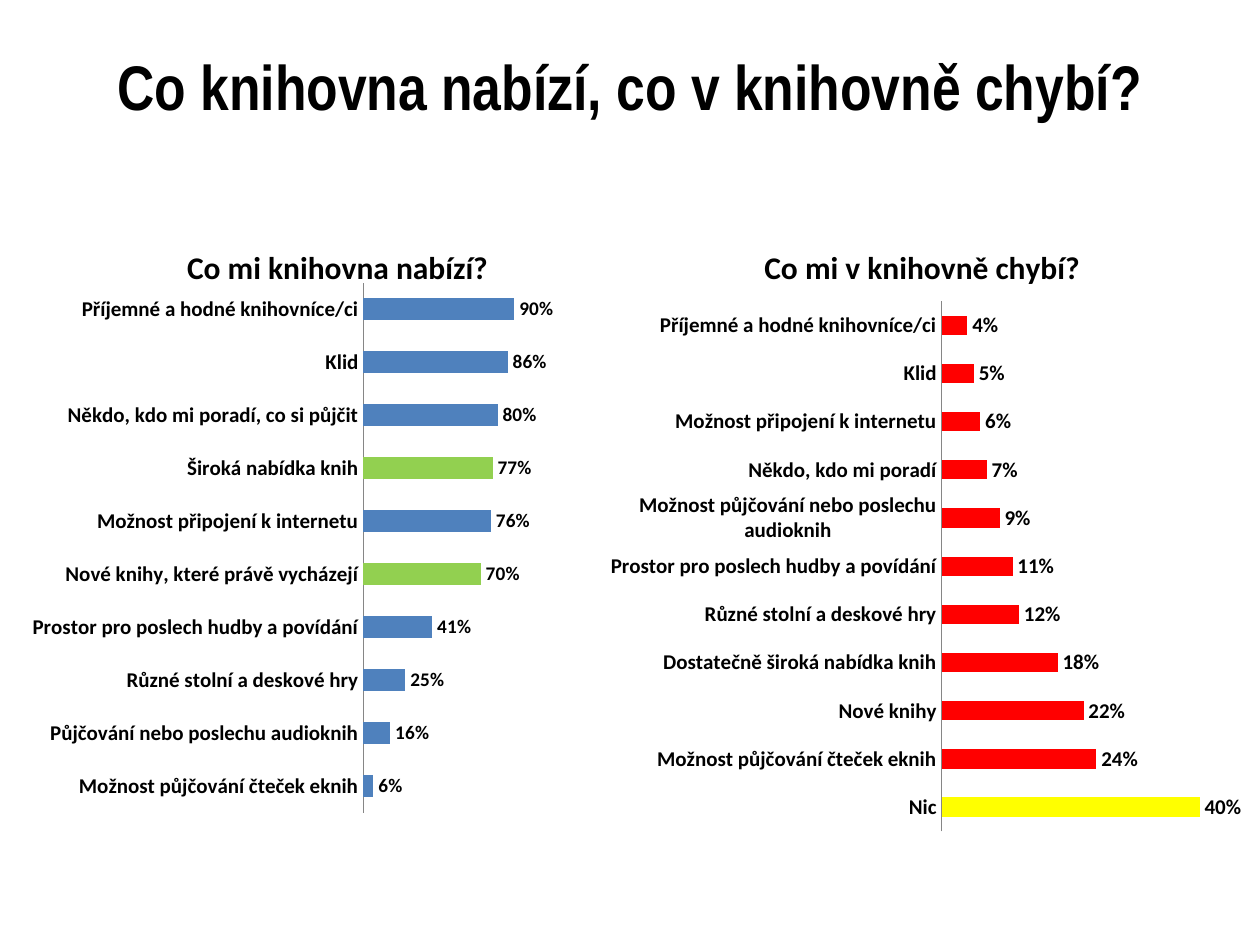
from lxml.etree import SubElement
from pptx import Presentation
from pptx.chart.data import CategoryChartData
from pptx.dml.color import RGBColor
from pptx.enum.chart import XL_CHART_TYPE, XL_LABEL_POSITION, XL_TICK_MARK
from pptx.enum.text import MSO_ANCHOR, PP_ALIGN
from pptx.oxml.ns import qn
from pptx.util import Inches, Pt

BLACK = RGBColor(0x00, 0x00, 0x00)
GRAY = RGBColor(0x86, 0x86, 0x86)
BLUE = RGBColor(0x4F, 0x81, 0xBD)
GREEN = RGBColor(0x92, 0xD0, 0x50)
RED = RGBColor(0xFF, 0x00, 0x00)
YELLOW = RGBColor(0xFF, 0xFF, 0x00)

PERCENT = "###0%"

OFFERED = {
    "Možnost půjčování čteček eknih": 0.06,
    "Půjčování nebo poslechu audioknih": 0.16,
    "Různé stolní a deskové hry": 0.25,
    "Prostor pro poslech hudby a povídání": 0.41,
    "Nové knihy, které právě vycházejí": 0.70,
    "Možnost připojení k internetu": 0.76,
    "Široká nabídka knih": 0.77,
    "Někdo, kdo mi poradí, co si půjčit": 0.80,
    "Klid": 0.86,
    "Příjemné a hodné knihovníce/ci": 0.90,
}
MISSING = {
    "Nic": 0.40,
    "Možnost půjčování čteček eknih": 0.24,
    "Nové knihy": 0.22,
    "Dostatečně široká nabídka knih": 0.18,
    "Různé stolní a deskové hry": 0.12,
    "Prostor pro poslech hudby a povídání": 0.11,
    "Možnost půjčování nebo poslechu audioknih": 0.09,
    "Někdo, kdo mi poradí": 0.07,
    "Možnost připojení k internetu": 0.06,
    "Klid": 0.05,
    "Příjemné a hodné knihovníce/ci": 0.04,
}


def write(frame, text, font="Calibri", size=18, bold=True, color=BLACK):
    """Put formatted, centred text in a text frame."""
    paragraph = frame.paragraphs[0]
    paragraph.alignment = PP_ALIGN.CENTER
    run = paragraph.add_run()
    run.text = text
    set_font(run.font, font, size, bold, color)


def set_font(target, font="Calibri", size=12, bold=True, color=BLACK):
    """Apply one typeface, size, weight and colour."""
    target.name, target.size, target.bold = font, Pt(size), bold
    target.color.rgb = color


def place_plot(chart, left, top, width, height):
    """Fix the inner plot area as shares of the chart."""
    area = chart.plots[0]._element.getparent()
    layout = area.find(qn("c:layout"))
    if layout is None:
        layout = SubElement(area, qn("c:layout"))
        area.insert(0, layout)
    manual = SubElement(layout, qn("c:manualLayout"))
    settings = {"layoutTarget": "inner", "xMode": "edge", "yMode": "edge",
                "x": left, "y": top, "w": width, "h": height}
    for tag, value in settings.items():
        SubElement(manual, qn(f"c:{tag}")).set("val", str(value))


class SurveySlide:
    """Holds the slide and draws its parts at shares of its size."""

    def __init__(self, deck):
        """Add a blank slide to the deck."""
        self.width, self.height = deck.slide_width, deck.slide_height
        self.slide = deck.slides.add_slide(deck.slide_layouts[6])

    def box(self, left, top, width, height):
        """Turn shares of the slide into lengths."""
        return (int(left * self.width), int(top * self.height),
                int(width * self.width), int(height * self.height))

    def heading(self, text, *shares):
        """Draw the slide heading."""
        frame = self.slide.shapes.add_textbox(*self.box(*shares)).text_frame
        frame.word_wrap = True
        frame.vertical_anchor = MSO_ANCHOR.MIDDLE
        write(frame, text, font="Arial Narrow", size=36)

    def bars(self, question, answers, left, plot, maximum, color, accents,
             label_size, axis_width):
        """Draw one bar chart of answer shares."""
        data = CategoryChartData(number_format=PERCENT)
        data.categories = list(answers)
        data.add_series("Series 1", list(answers.values()))
        chart = self.slide.shapes.add_chart(
            XL_CHART_TYPE.BAR_CLUSTERED,
            *self.box(left, 0.233, 0.512, 0.66), data).chart
        set_font(chart.font, size=10, bold=False)
        chart.has_legend = False
        chart.has_title = True
        write(chart.chart_title.text_frame, question)
        chart.chart_title.include_in_layout = False
        place_plot(chart, *plot)

        categories, shares = chart.category_axis, chart.value_axis
        categories.major_tick_mark = XL_TICK_MARK.NONE
        categories.format.line.color.rgb = GRAY
        categories.format.line.width = Pt(axis_width)
        set_font(categories.tick_labels.font)
        shares.visible = False
        shares.has_major_gridlines = False
        shares.minimum_scale, shares.maximum_scale = 0, maximum

        bars = chart.plots[0]
        bars.vary_by_categories = False
        bars.gap_width, bars.overlap = 150, -25
        bars.has_data_labels = True
        labels = bars.data_labels
        labels.show_value = True
        labels.position = XL_LABEL_POSITION.OUTSIDE_END
        labels.number_format, labels.number_format_is_linked = PERCENT, False
        set_font(labels.font, size=label_size)

        series = bars.series[0]
        series.invert_if_negative = False
        series.format.fill.solid()
        series.format.fill.fore_color.rgb = color
        for answer, accent in accents.items():
            fill = series.points[list(answers).index(answer)].format.fill
            fill.solid()
            fill.fore_color.rgb = accent


def main():
    """Build and save the survey slide."""
    deck = Presentation()
    deck.slide_width, deck.slide_height = Inches(10), Inches(7.5)
    survey = SurveySlide(deck)
    survey.heading("Co knihovna nabízí, co v knihovně chybí?",
                   0.05, 0.04, 0.9, 0.1)
    survey.bars("Co mi knihovna nabízí?", OFFERED, left=0.012,
                plot=(0.54, 0.1, 0.26, 0.85), maximum=1, color=BLUE,
                accents={"Nové knihy, které právě vycházejí": GREEN,
                         "Široká nabídka knih": GREEN},
                label_size=11, axis_width=0.75)
    survey.bars("Co mi v knihovně chybí?", MISSING, left=0.476,
                plot=(0.53, 0.13, 0.4, 0.85), maximum=0.4, color=RED,
                accents={"Nic": YELLOW}, label_size=12, axis_width=1)
    deck.save("out.pptx")


if __name__ == "__main__":
    main()
